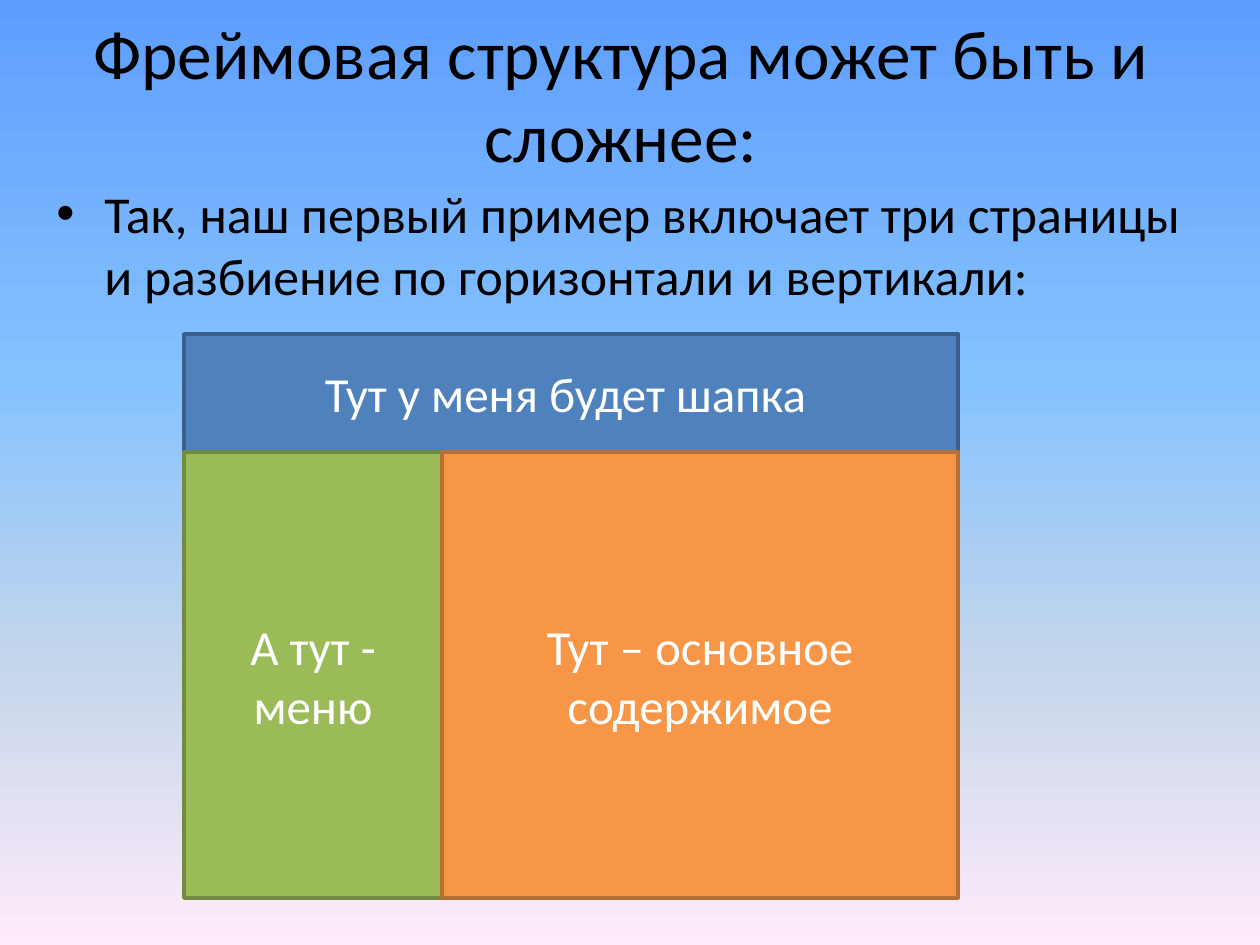
"""Builds a slide that explains a nested frame layout."""
from dataclasses import dataclass

from lxml import etree
from pptx import Presentation
from pptx import util as u
from pptx.dml.color import RGBColor
from pptx.enum import shapes, text
from pptx.oxml.ns import qn

EMU_PER_PX = 914400 / 126
FONT = "Calibri"
SKY = [(0, "5E9EFF"), (40, "85C2FF"), (70, "C4D6EB"), (100, "FFEBFA")]


@dataclass
class Box:
    left: int
    top: int
    width: int
    height: int


@dataclass
class Frame:
    box: Box
    label: str
    fill: str
    border: str


LEFT, TOP, MENU_WIDTH, MAIN_WIDTH = 184, 334, 258, 516
HEADER_HEIGHT, BODY_HEIGHT = 118, 446
BODY_TOP = TOP + HEADER_HEIGHT
FRAMES = [
    Frame(Box(LEFT, TOP, MENU_WIDTH + MAIN_WIDTH, HEADER_HEIGHT),
          "Тут у меня будет шапка ", "4F81BD", "3A5F8C"),
    Frame(Box(LEFT, BODY_TOP, MENU_WIDTH, BODY_HEIGHT),
          "А тут - меню", "9BBB59", "738A42"),
    Frame(Box(LEFT + MENU_WIDTH, BODY_TOP, MAIN_WIDTH, BODY_HEIGHT),
          "Тут – основное содержимое", "F79646", "B76F34"),
]


def px(length: int) -> u.Emu:
    return u.Emu(round(length * EMU_PER_PX))


def place(box: Box) -> tuple:
    return px(box.left), px(box.top), px(box.width), px(box.height)


def rgb(value: str) -> RGBColor:
    return RGBColor.from_string(value)


def write(shape, words: str, size: float, color: str, align, anchor):
    frame = shape.text_frame
    frame.word_wrap = True
    frame.vertical_anchor = anchor
    paragraph = frame.paragraphs[0]
    paragraph.alignment = align
    run = paragraph.add_run()
    run.text = words
    run.font.size = u.Pt(size)
    run.font.name = FONT
    run.font.color.rgb = rgb(color)
    return paragraph


def paint_background(slide, stops: list) -> None:
    fill = slide.background.fill
    fill.gradient()
    fill.gradient_angle = 270
    stop_list = next(slide.element.iter(qn("a:gsLst")))
    for old_stop in list(stop_list):
        stop_list.remove(old_stop)
    for percent, color in stops:
        stop = etree.SubElement(stop_list, qn("a:gs"), pos=str(percent * 1000))
        etree.SubElement(stop, qn("a:srgbClr"), val=color)


def add_bullet(paragraph, indent: int) -> None:
    properties = paragraph._p.get_or_add_pPr()
    properties.set("marL", str(px(indent)))
    properties.set("indent", str(-px(indent)))
    etree.SubElement(properties, qn("a:buFont"), typeface="Arial")
    etree.SubElement(properties, qn("a:buChar"), char="•")


def draw_frame(slide, frame: Frame) -> None:
    panel = slide.shapes.add_shape(shapes.MSO_SHAPE.RECTANGLE, *place(frame.box))
    panel.shadow.inherit = False
    panel.fill.solid()
    panel.fill.fore_color.rgb = rgb(frame.fill)
    panel.line.color.rgb = rgb(frame.border)
    panel.line.width = u.Pt(2)
    write(panel, frame.label, 28, "FFFFFF",
          text.PP_ALIGN.CENTER, text.MSO_ANCHOR.MIDDLE)


def main() -> None:
    deck = Presentation()
    deck.slide_width, deck.slide_height = px(1260), px(945)
    slide = deck.slides.add_slide(deck.slide_layouts[6])
    paint_background(slide, SKY)

    heading = slide.shapes.add_textbox(*place(Box(54, 0, 1134, 186)))
    write(heading, "Фреймовая структура может быть и сложнее:", 39.6, "000000",
          text.PP_ALIGN.CENTER, text.MSO_ANCHOR.MIDDLE)

    intro = slide.shapes.add_textbox(*place(Box(44, 175, 1171, 159)))
    example = write(
        intro,
        "Так, наш первый пример включает три страницы "
        "и разбиение по горизонтали и вертикали:",
        29.6, "000000", text.PP_ALIGN.LEFT, text.MSO_ANCHOR.TOP)
    example.space_before = u.Pt(5.9)
    add_bullet(example, 48)

    for frame in FRAMES:
        draw_frame(slide, frame)
    deck.save("out.pptx")


if __name__ == "__main__":
    main()
